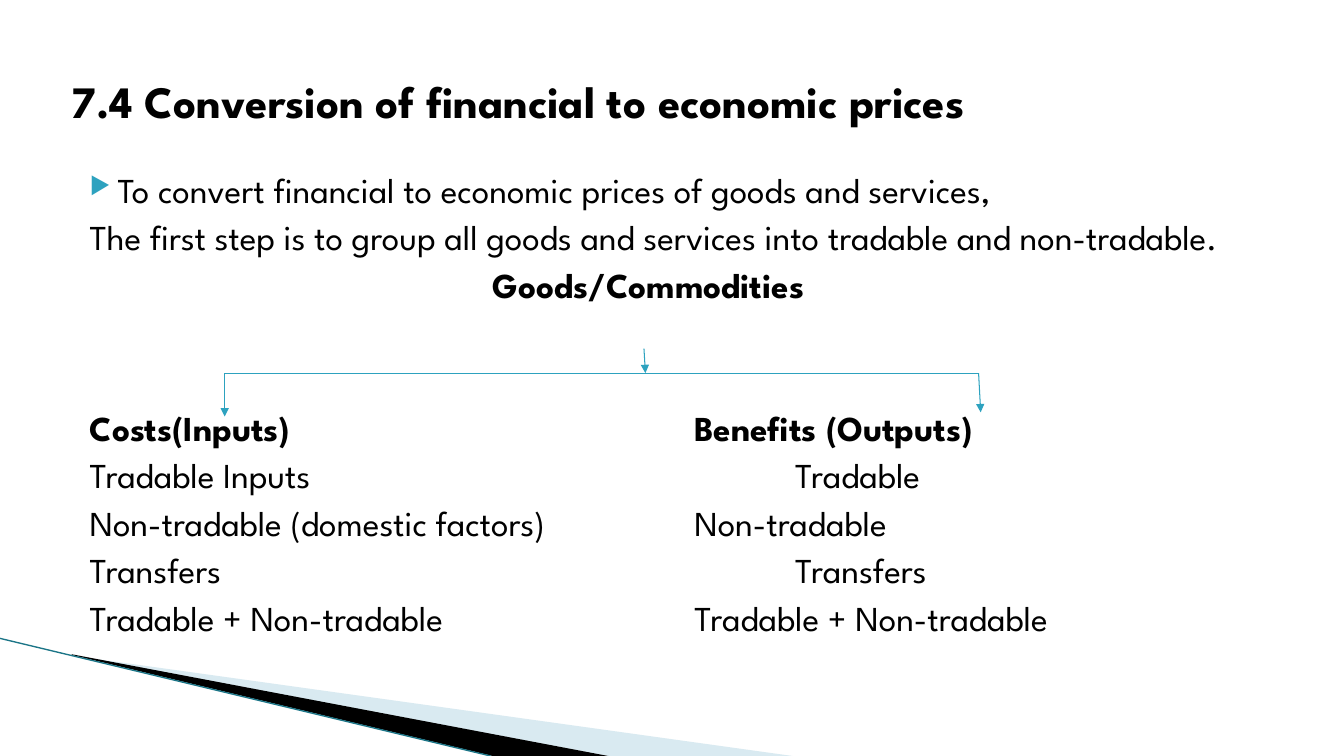
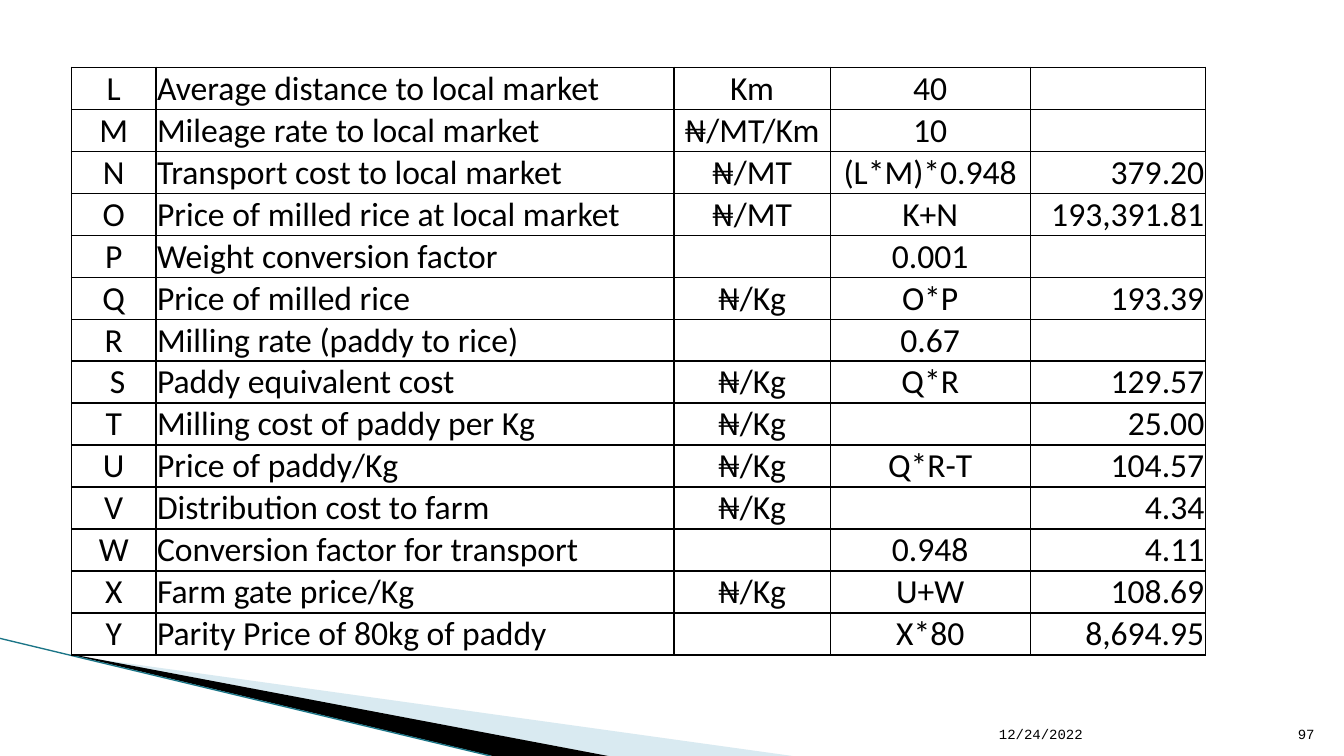
"""Build two slides on converting financial prices to economic prices."""
from dataclasses import dataclass
from typing import Optional

from lxml import etree
from pptx import Presentation
from pptx.dml.color import RGBColor
from pptx.enum.shapes import MSO_CONNECTOR
from pptx.enum.text import MSO_ANCHOR, PP_ALIGN
from pptx.oxml.ns import qn
from pptx.util import Pt

COLORS = {
    "text": "000000",
    "accent": "2DA2BF",
    "band_light": "A0CBDC",
    "band_dark": "000000",
    "band_edge": "1B7587",
}
HEADING_FONT = "League Spartan"
TABLE_FONT = "Calibri"
FOOTER_FONT = "Courier New"


@dataclass(frozen=True)
class Band:
    """A filled wedge at the foot of every slide."""
    points: tuple
    color: str
    opacity: Optional[int] = None


@dataclass(frozen=True)
class Branch:
    """One line of the commodity tree."""
    start: tuple
    end: tuple
    arrow: bool = True


@dataclass(frozen=True)
class BodyLine:
    """One paragraph of the body text."""
    text: str
    tab: Optional[float] = None
    bold: bool = False
    bullet: bool = False
    space_before: float = 4


@dataclass(frozen=True)
class Footer:
    """A small text at the foot of a slide."""
    text: str
    left: float
    width: float
    alignment: PP_ALIGN


BANDS = (
    Band(((52.5, 468.5), (566, 540), (434, 540), (52.5, 468)), "band_light", 40),
    Band(((51, 467.3), (434.5, 540), (352, 540), (52, 468)), "band_dark"),
)
BAND_EDGE = Branch((0, 456), (350.5, 540), arrow=False)

BODY_LINES = (
    BodyLine("To convert financial to economic prices of goods and services,",
             bullet=True, space_before=0),
    BodyLine("The first step is to group all goods and services into tradable and non-tradable."),
    BodyLine("\tGoods/Commodities", tab=288, bold=True),
    BodyLine("Costs(Inputs)\tBenefits (Outputs)", tab=432, bold=True, space_before=72),
    BodyLine("Tradable Inputs\tTradable", tab=504),
    BodyLine("Non-tradable (domestic factors)\tNon-tradable", tab=432),
    BodyLine("Transfers\tTransfers", tab=504),
    BodyLine("Tradable + Non-tradable\tTradable + Non-tradable", tab=432),
)
BRANCHES = (
    Branch((460, 249), (461, 266.5)),
    Branch((160.5, 266.5), (699, 266.5), arrow=False),
    Branch((160.5, 266.5), (160.5, 297.5)),
    Branch((699, 266.5), (700.5, 294.5)),
)
FOOTERS = (
    Footer("12/24/2022", 706.5, 201.5, PP_ALIGN.LEFT),
    Footer("97", 908, 38, PP_ALIGN.RIGHT),
)

COLUMN_WIDTHS = (60.5, 370, 111.5, 143, 125)
COLUMN_ALIGNMENTS = (PP_ALIGN.CENTER, PP_ALIGN.LEFT, PP_ALIGN.CENTER,
                     PP_ALIGN.CENTER, PP_ALIGN.RIGHT)
ROW_HEIGHT = 30
PRICE_ROWS = (
    ("L", "Average distance to local market", "Km", "40", ""),
    ("M", "Mileage rate to local market", "₦/MT/Km", "10", ""),
    ("N", "Transport cost to local market", "₦/MT", "(L*M)*0.948", "379.20"),
    ("O", "Price of milled rice at local market", "₦/MT", "K+N", "193,391.81"),
    ("P", "Weight conversion factor", "", "0.001", ""),
    ("Q", "Price of milled rice", "₦/Kg", "O*P", "193.39"),
    ("R", "Milling rate (paddy to rice)", "", "0.67", ""),
    (" S", "Paddy equivalent cost", "₦/Kg", "Q*R", "129.57"),
    ("T", "Milling cost of paddy per Kg", "₦/Kg", "", "25.00"),
    ("U", "Price of paddy/Kg", "₦/Kg", "Q*R-T", "104.57"),
    ("V", "Distribution cost to farm", "₦/Kg", "", "4.34"),
    ("W", "Conversion factor for transport", "", "0.948", "4.11"),
    ("X", "Farm gate price/Kg", "₦/Kg", "U+W", "108.69"),
    ("Y", "Parity Price of 80kg of paddy", "", "X*80", "8,694.95"),
)


def rgb(name: str) -> RGBColor:
    """Look up a colour by name."""
    return RGBColor.from_string(COLORS[name])


def add_run(paragraph, text: str, font: str, size: float, bold: bool = False) -> None:
    """Append a formatted run to a paragraph."""
    run = paragraph.add_run()
    run.text = text
    run.font.name = font
    run.font.size = Pt(size)
    run.font.bold = bold
    run.font.color.rgb = rgb("text")


def add_line(slide, branch: Branch, color: str, width: float):
    """Draw a straight line, with an arrowhead if asked."""
    line = slide.shapes.add_connector(
        MSO_CONNECTOR.STRAIGHT, *(Pt(value) for value in branch.start + branch.end))
    line.line.color.rgb = rgb(color)
    line.line.width = Pt(width)
    if branch.arrow:
        outline = line.line._get_or_add_ln()
        etree.SubElement(outline, qn("a:tailEnd"), type="triangle")
    etree.SubElement(line.element.spPr, qn("a:effectLst"))
    return line


def add_band(slide, band: Band):
    """Draw one wedge."""
    points = [(Pt(x), Pt(y)) for x, y in band.points]
    builder = slide.shapes.build_freeform(*points[0], scale=1.0)
    builder.add_line_segments(points[1:], close=True)
    shape = builder.convert_to_shape()
    shape.shadow.inherit = False
    shape.fill.solid()
    shape.fill.fore_color.rgb = rgb(band.color)
    shape.line.fill.background()
    if band.opacity is not None:
        color = shape.element.spPr.find(qn("a:solidFill"))[0]
        etree.SubElement(color, qn("a:alpha"), val=str(band.opacity * 1000))
    return shape


def decorate_master(presentation, slide) -> None:
    """Draw the shared wedges and move them to the slide master."""
    shapes = [add_band(slide, band) for band in BANDS]
    shapes.append(add_line(slide, BAND_EDGE, "band_edge", 0.95))
    for shape in shapes:
        presentation.slide_master.shapes.element.append(shape.element)


def set_title(slide, text: str) -> None:
    """Place and format the title placeholder."""
    title = slide.shapes.title
    title.left, title.top, title.width, title.height = Pt(44), Pt(26.5), Pt(864), Pt(90)
    frame = title.text_frame
    frame.vertical_anchor = MSO_ANCHOR.MIDDLE
    paragraph = frame.paragraphs[0]
    paragraph.alignment = PP_ALIGN.LEFT
    add_run(paragraph, text, HEADING_FONT, 32, bold=True)


def add_bullet(paragraph) -> None:
    """Give a paragraph a coloured hanging bullet."""
    properties = paragraph._p.get_or_add_pPr()
    properties.set("marL", str(Pt(20)))
    properties.set("indent", str(-Pt(20)))
    color = etree.SubElement(properties, qn("a:buClr"))
    etree.SubElement(color, qn("a:srgbClr"), val=COLORS["accent"])
    etree.SubElement(properties, qn("a:buSzPct"), val="68000")
    etree.SubElement(properties, qn("a:buChar"), char="▶")


def add_tab_stop(paragraph, position: float) -> None:
    """Give a paragraph one left tab stop."""
    tabs = etree.SubElement(paragraph._p.get_or_add_pPr(), qn("a:tabLst"))
    etree.SubElement(tabs, qn("a:tab"), pos=str(Pt(position)), algn="l")


def add_body(slide) -> None:
    """Write the body text in two tabbed columns."""
    frame = slide.shapes.add_textbox(Pt(48), Pt(116.5), Pt(864), Pt(356.5)).text_frame
    frame.word_wrap = True
    frame.margin_left = Pt(16)
    for index, line in enumerate(BODY_LINES):
        paragraph = frame.add_paragraph() if index else frame.paragraphs[0]
        if line.bullet:
            add_bullet(paragraph)
        if line.tab is not None:
            add_tab_stop(paragraph, line.tab)
        paragraph.space_before = Pt(line.space_before)
        add_run(paragraph, line.text, HEADING_FONT, 25, line.bold)


def add_footer(slide, footer: Footer) -> None:
    """Write a footer text."""
    box = slide.shapes.add_textbox(Pt(footer.left), Pt(504.5), Pt(footer.width), Pt(29))
    frame = box.text_frame
    frame.word_wrap = True
    frame.vertical_anchor = MSO_ANCHOR.BOTTOM
    paragraph = frame.paragraphs[0]
    paragraph.alignment = footer.alignment
    add_run(paragraph, footer.text, FOOTER_FONT, 10)


def add_borders(cell) -> None:
    """Outline a cell on all four sides."""
    properties = cell._tc.get_or_add_tcPr()
    for index, side in enumerate(("lnL", "lnR", "lnT", "lnB")):
        border = etree.Element(qn(f"a:{side}"), w=str(Pt(1)))
        fill = etree.SubElement(border, qn("a:solidFill"))
        etree.SubElement(fill, qn("a:srgbClr"), val=COLORS["text"])
        properties.insert(index, border)


def fill_cell(cell, text: str, alignment: PP_ALIGN) -> None:
    """Format a table cell and write its text."""
    cell.margin_left = cell.margin_right = cell.margin_top = Pt(0.7)
    cell.margin_bottom = Pt(0)
    cell.vertical_anchor = MSO_ANCHOR.BOTTOM
    cell.fill.background()
    add_borders(cell)
    paragraph = cell.text_frame.paragraphs[0]
    paragraph.alignment = alignment
    if text:
        add_run(paragraph, text, TABLE_FONT, 24)


def add_price_table(slide) -> None:
    """Draw the parity price table."""
    table = slide.shapes.add_table(
        len(PRICE_ROWS), len(COLUMN_WIDTHS), Pt(51), Pt(48),
        Pt(sum(COLUMN_WIDTHS)), Pt(ROW_HEIGHT * len(PRICE_ROWS))).table
    table.first_row = False
    table.horz_banding = False
    for column, width in zip(table.columns, COLUMN_WIDTHS):
        column.width = Pt(width)
    for row, texts in zip(table.rows, PRICE_ROWS):
        row.height = Pt(ROW_HEIGHT)
        for cell, text, alignment in zip(row.cells, texts, COLUMN_ALIGNMENTS):
            fill_cell(cell, text, alignment)


def main() -> None:
    """Build and save the presentation."""
    presentation = Presentation()
    presentation.slide_width, presentation.slide_height = Pt(960), Pt(540)
    title_only, blank = presentation.slide_layouts[5], presentation.slide_layouts[6]

    conversion_slide = presentation.slides.add_slide(title_only)
    decorate_master(presentation, conversion_slide)
    set_title(conversion_slide, "7.4 Conversion of financial to economic prices")
    add_body(conversion_slide)
    for branch in BRANCHES:
        add_line(conversion_slide, branch, "accent", 0.75)

    table_slide = presentation.slides.add_slide(blank)
    for footer in FOOTERS:
        add_footer(table_slide, footer)
    add_price_table(table_slide)

    presentation.save("out.pptx")


if __name__ == "__main__":
    main()
